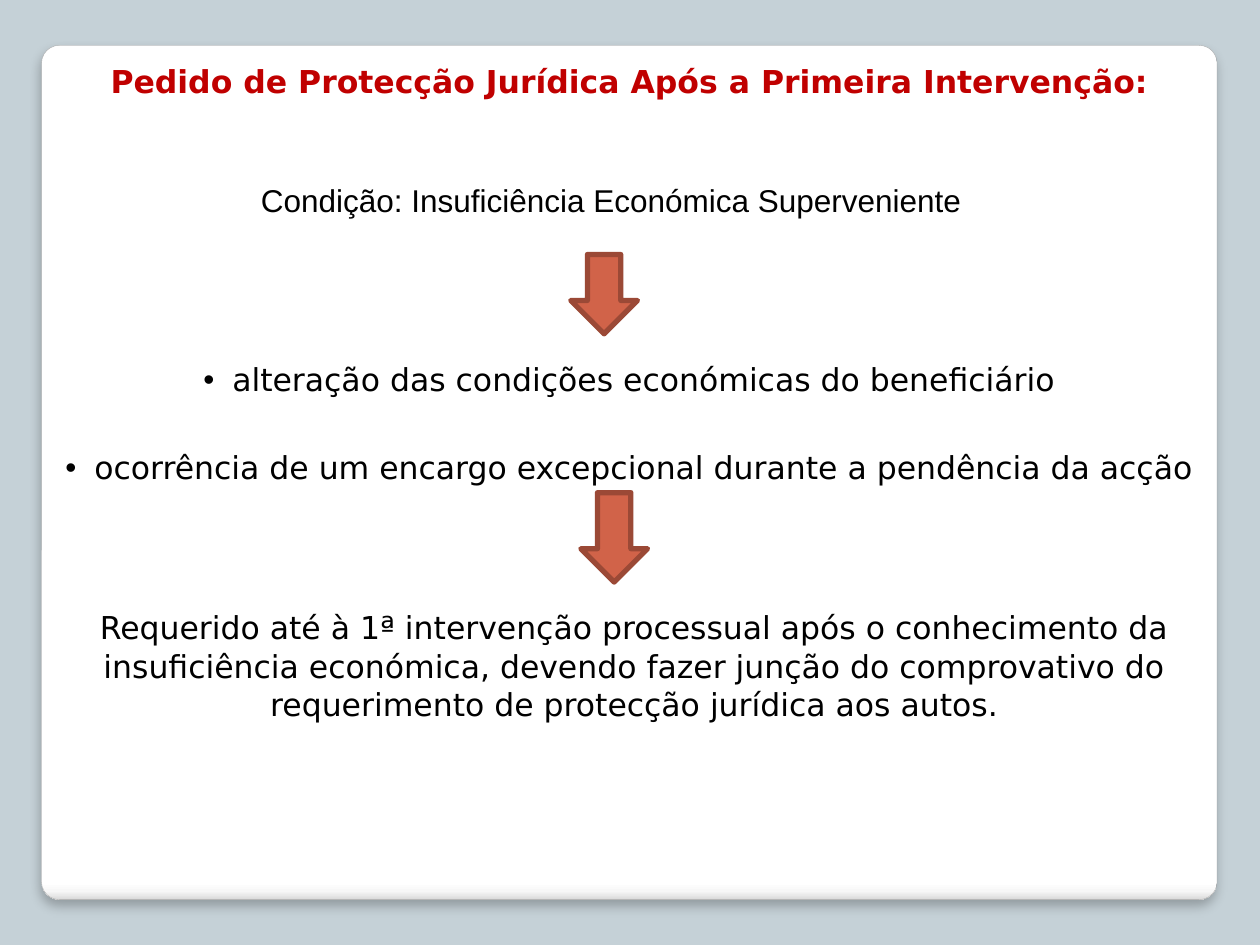
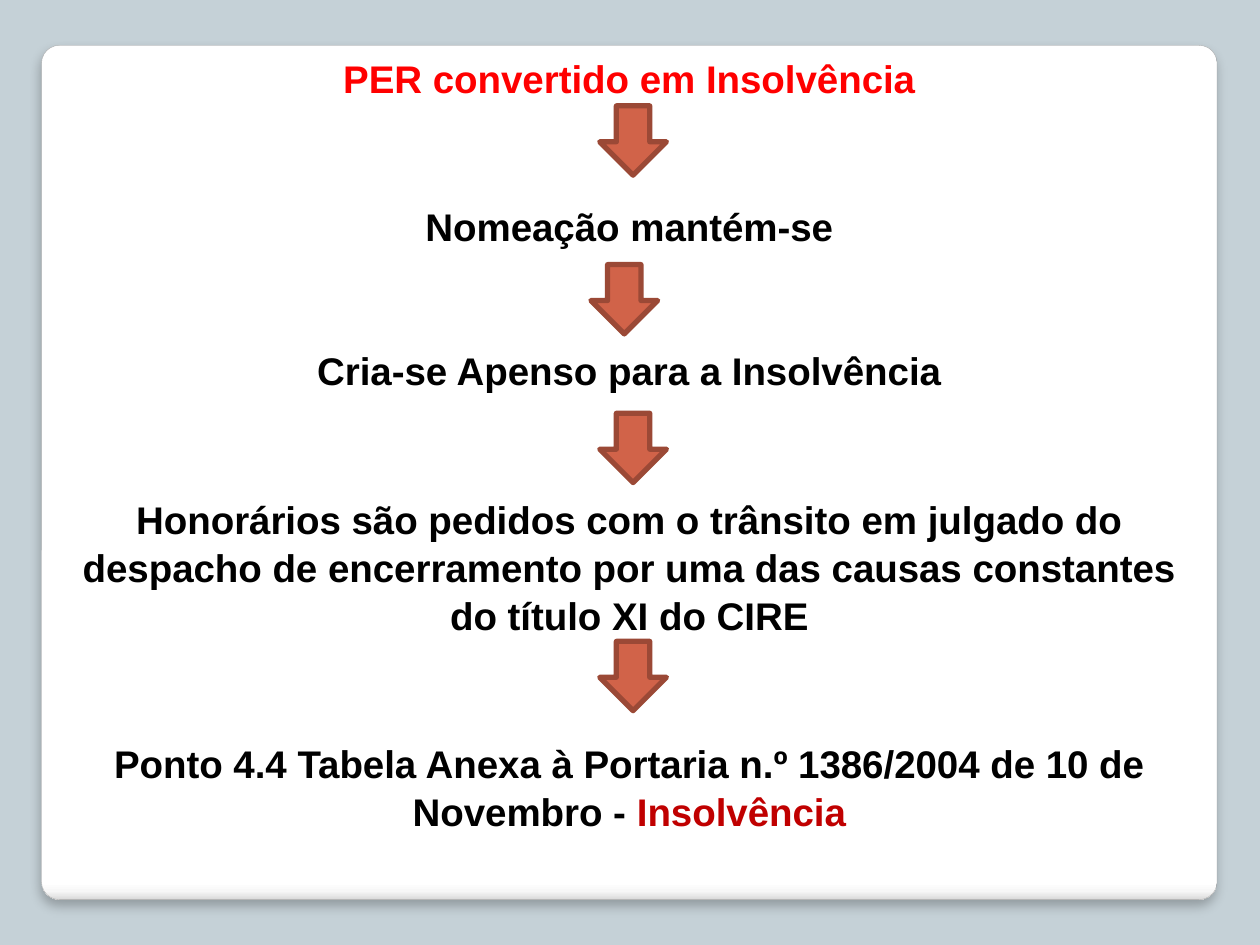
"""Builds two slides on legal-aid requests and on insolvency appointments."""
import pptx
import pptx.dml.color
import pptx.enum.shapes
import pptx.enum.text
import pptx.oxml
import pptx.oxml.ns
import pptx.util
from lxml import etree

Inches = pptx.util.Inches
Pt = pptx.util.Pt
RGBColor = pptx.dml.color.RGBColor
Shapes = pptx.enum.shapes.MSO_SHAPE

BACKGROUND = RGBColor(0xC5, 0xD1, 0xD7)
PANEL_EDGE = RGBColor(0xA4, 0xA4, 0xA4)
ARROW_FILL = RGBColor(0xD1, 0x63, 0x49)
ARROW_EDGE = RGBColor(0x9B, 0x49, 0x36)
BLACK = RGBColor(0, 0, 0)
DARK_RED = RGBColor(0xC0, 0, 0)
RED = RGBColor(0xFF, 0, 0)

SANS, ARIAL = "DejaVu Sans", "Arial"
WIDTH, HEIGHT = 10, 7.5
PANEL = (0.33, 0.36, 9.33, 6.78)
PANEL_STOPS = [(0, "FFFFFF"), (98, "FFFFFF"), (99, "F7F7F7"), (100, "DADADA")]
TEXT_LEFT, TEXT_WIDTH = 0.35, 9.29
ARROW_WIDTH = 0.53
BULLET_INDENT = 0.23

REQUEST_TEXTS = [
    dict(runs=[("Pedido de Protecção Jurídica Após a Primeira Intervenção:", DARK_RED)],
         top=0.44, height=0.4, bold=True),
    dict(runs=[("Condição: Insuficiência Económica Superveniente", BLACK)],
         top=1.39, height=0.4, left=0.4, width=8.9, font=ARIAL),
    dict(runs=[("alteração das condições económicas do beneficiário", BLACK)],
         top=2.81, height=0.5, bullet=True),
    dict(runs=[("ocorrência de um encargo excepcional durante a pendência da acção", BLACK)],
         top=3.36, height=0.56, bullet=True, spacing=1.5),
    dict(runs=[("Requerido até à 1ª intervenção processual após o conhecimento da "
                "insuficiência económica, devendo fazer junção do comprovativo do "
                "requerimento de protecção jurídica aos autos.", BLACK)],
         top=4.77, height=1.01, width=9.37, spacing=1.02),
]
REQUEST_ARROWS = [(4.53, 2.02, 0.63), (4.61, 3.91, 0.71)]

INSOLVENCY_STEPS = [
    (0, [("PER convertido em Insolvência", RED)]),
    (57.4, [("Nomeação mantém-se", BLACK)]),
    (55, [("Cria-se Apenso para a Insolvência", BLACK)]),
    (57.4, [("Honorários são pedidos com o trânsito em julgado do despacho de "
             "encerramento por uma das causas constantes do título XI do CIRE", BLACK)]),
    (57.4, [("Ponto 4.4 Tabela Anexa à Portaria n.º 1386/2004 de 10 de Novembro - ", BLACK),
            ("Insolvência", DARK_RED)]),
]
INSOLVENCY_ARROWS = [(4.76, 0.84, 0.55), (4.69, 2.1, 0.55),
                     (4.76, 3.28, 0.55), (4.76, 5.09, 0.55)]


def add_panel(slide):
    """Draws the white rounded panel with its shaded foot and soft shadow."""
    panel = slide.shapes.add_shape(Shapes.ROUNDED_RECTANGLE, *map(Inches, PANEL))
    panel.adjustments[0] = 0.021
    panel.line.color.rgb = PANEL_EDGE
    panel.line.width = Pt(0.16)
    panel.shadow.inherit = False
    namespace = pptx.oxml.ns.nsdecls("a")
    stops = "".join(f'<a:gs pos="{share * 1000}"><a:srgbClr val="{color}"/></a:gs>'
                    for share, color in PANEL_STOPS)
    gradient = pptx.oxml.parse_xml(
        f'<a:gradFill {namespace} rotWithShape="1"><a:gsLst>{stops}</a:gsLst>'
        '<a:lin ang="5400000" scaled="0"/></a:gradFill>')
    shadow = pptx.oxml.parse_xml(
        f'<a:outerShdw {namespace} blurRad="{Pt(6)}" dist="{Pt(4)}" dir="5400000" '
        'algn="tl" rotWithShape="0"><a:srgbClr val="000000"><a:alpha val="25000"/>'
        '</a:srgbClr></a:outerShdw>')
    properties = panel._element.spPr
    properties.find(pptx.oxml.ns.qn("a:prstGeom")).addnext(gradient)
    properties.find(pptx.oxml.ns.qn("a:effectLst")).append(shadow)


def add_arrows(slide, arrows):
    """Draws the down arrows that link the steps."""
    for left, top, height in arrows:
        arrow = slide.shapes.add_shape(Shapes.DOWN_ARROW, Inches(left), Inches(top),
                                       Inches(ARROW_WIDTH), Inches(height))
        arrow.fill.solid()
        arrow.fill.fore_color.rgb = ARROW_FILL
        arrow.line.color.rgb = ARROW_EDGE
        arrow.line.width = Pt(3)
        arrow.shadow.inherit = False


def add_frame(slide, top, height, left=TEXT_LEFT, width=TEXT_WIDTH):
    """Adds a wrapping text box and returns its text frame."""
    box = slide.shapes.add_textbox(*map(Inches, (left, top, width, height)))
    box.text_frame.word_wrap = True
    return box.text_frame


def write(paragraph, runs, size, font=SANS, bold=False, bullet=False, spacing=None):
    """Fills one centred paragraph."""
    paragraph.alignment = pptx.enum.text.PP_ALIGN.CENTER
    if spacing:
        paragraph.line_spacing = spacing
    if bullet:
        properties = paragraph._p.get_or_add_pPr()
        properties.set("marL", str(Inches(BULLET_INDENT)))
        properties.set("indent", str(-Inches(BULLET_INDENT)))
        etree.SubElement(properties, pptx.oxml.ns.qn("a:buFont"), typeface=ARIAL)
        etree.SubElement(properties, pptx.oxml.ns.qn("a:buChar"), char="•")
    paragraph.font.name, paragraph.font.size, paragraph.font.bold = font, Pt(size), bold
    for text, color in runs:
        run = paragraph.add_run()
        run.text = text
        run.font.color.rgb = color


def add_base_slide(presentation):
    """Adds a blank slide with the shared background and panel."""
    slide = presentation.slides.add_slide(presentation.slide_layouts[6])
    slide.background.fill.solid()
    slide.background.fill.fore_color.rgb = BACKGROUND
    add_panel(slide)
    return slide


def build_request(presentation):
    """Builds the slide on requests after the first intervention."""
    slide = add_base_slide(presentation)
    for item in REQUEST_TEXTS:
        place = {key: item[key] for key in ("top", "height", "left", "width") if key in item}
        style = {key: item[key] for key in item if key not in place}
        write(add_frame(slide, **place).paragraphs[0], size=18, **style)
    add_arrows(slide, REQUEST_ARROWS)


def build_insolvency(presentation):
    """Builds the slide on proceedings converted into insolvency."""
    slide = add_base_slide(presentation)
    frame = add_frame(slide, top=0.37, height=7.06)
    for index, (gap, runs) in enumerate(INSOLVENCY_STEPS):
        paragraph = frame.add_paragraph() if index else frame.paragraphs[0]
        if gap:
            paragraph.space_before = Pt(gap)
        write(paragraph, runs, size=22, font=ARIAL, bold=True, spacing=1.04)
    add_arrows(slide, INSOLVENCY_ARROWS)


def main():
    """Builds and saves the presentation."""
    presentation = pptx.Presentation()
    presentation.slide_width, presentation.slide_height = Inches(WIDTH), Inches(HEIGHT)
    build_request(presentation)
    build_insolvency(presentation)
    presentation.save("out.pptx")


if __name__ == "__main__":
    main()
